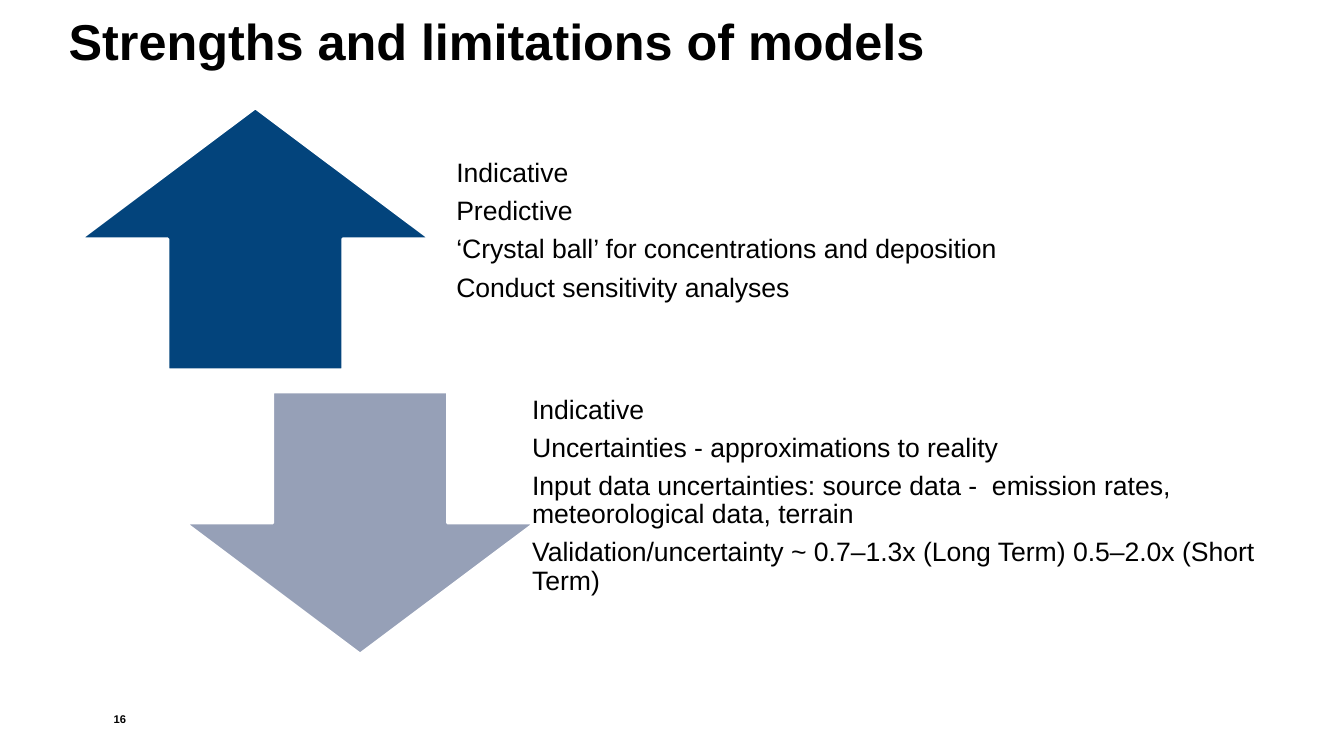
from dataclasses import dataclass

from pptx import Presentation
from pptx.dml.color import RGBColor
from pptx.enum.shapes import MSO_SHAPE
from pptx.enum.text import MSO_ANCHOR, PP_ALIGN
from pptx.util import Cm, Pt

UP_ARROW, DOWN_ARROW = MSO_SHAPE.UP_ARROW, MSO_SHAPE.DOWN_ARROW
TOP, MIDDLE, BOTTOM = MSO_ANCHOR.TOP, MSO_ANCHOR.MIDDLE, MSO_ANCHOR.BOTTOM
LEFT, RIGHT = PP_ALIGN.LEFT, PP_ALIGN.RIGHT


@dataclass(frozen=True)
class Theme:
    font: str = "Arial"
    text: RGBColor = RGBColor(0x00, 0x00, 0x00)
    outline: RGBColor = RGBColor(0xFF, 0xFF, 0xFF)
    strength: RGBColor = RGBColor(0x03, 0x44, 0x7C)
    limitation: RGBColor = RGBColor(0x96, 0xA0, 0xB7)
    title_size: float = 36
    body_size: float = 19
    number_size: float = 8
    body_gap: float = 6.65


THEME = Theme()

# Lengths in centimetres
SLIDE_WIDTH, SLIDE_HEIGHT = 33.87, 19.05
MARGIN_LEFT = 1.73
ARROW_WIDTH, ROW_HEIGHT = 8.81, 6.6
BODY_INSET = 0.38

STRENGTHS = [
    "Indicative",
    "Predictive",
    "‘Crystal ball’ for concentrations and deposition",
    "Conduct sensitivity analyses",
]
LIMITATIONS = [
    "Indicative",
    "Uncertainties - approximations to reality",
    "Input data uncertainties: source data -  emission rates, "
    "meteorological data, terrain",
    "Validation/uncertainty ~ 0.7–1.3x (Long Term) 0.5–2.0x (Short Term)",
]


def add_text(slide, box, lines, size, bold=False, anchor=TOP, align=LEFT,
             insets=(0, 0, 0, 0), spacing=0.9, gap=0):
    """Place lines in box (left, top, width, height)."""
    shape = slide.shapes.add_textbox(*map(Cm, box))
    frame = shape.text_frame
    frame.word_wrap = True
    frame.vertical_anchor = anchor
    (frame.margin_left, frame.margin_top,
     frame.margin_right, frame.margin_bottom) = map(Cm, insets)
    for index, line in enumerate(lines):
        paragraph = frame.paragraphs[0] if index == 0 else frame.add_paragraph()
        paragraph.alignment = align
        paragraph.line_spacing = spacing
        paragraph.space_after = Pt(gap)
        run = paragraph.add_run()
        run.text = line
        run.font.name = THEME.font
        run.font.size = Pt(size)
        run.font.bold = bold
        run.font.color.rgb = THEME.text


def add_title(slide, box):
    add_text(slide, box, ["Strengths and limitations of models"],
             THEME.title_size, bold=True)


def add_arrow_row(slide, box, arrow, color, lines, text_offset, lift=0):
    """Arrow at the left of box, its points to the right; lift raises the text."""
    left, top, width, height = box
    shape = slide.shapes.add_shape(
        arrow, Cm(left), Cm(top), Cm(ARROW_WIDTH), Cm(height))
    shape.shadow.inherit = False
    shape.fill.solid()
    shape.fill.fore_color.rgb = color
    shape.line.color.rgb = THEME.outline
    shape.line.width = Pt(2)
    add_text(slide, (left + text_offset, top, width - text_offset, height),
             lines, THEME.body_size, anchor=MIDDLE,
             insets=(BODY_INSET, 0, BODY_INSET, BODY_INSET + lift),
             gap=THEME.body_gap)


def add_slide_number(slide, box):
    add_text(slide, box, ["16"], THEME.number_size, bold=True,
             anchor=BOTTOM, align=RIGHT, spacing=0.95)


def main():
    presentation = Presentation()
    presentation.slide_width = Cm(SLIDE_WIDTH)
    presentation.slide_height = Cm(SLIDE_HEIGHT)
    slide = presentation.slides.add_slide(presentation.slide_layouts[6])

    add_title(slide, (MARGIN_LEFT, 0.43, 30.4, 1.68))

    # Strengths above, limitations stepped to the right below
    add_arrow_row(slide, (2.03, 2.72, 26.11, ROW_HEIGHT), UP_ARROW,
                  THEME.strength, STRENGTHS, text_offset=9.09)
    add_arrow_row(slide, (4.67, 9.88, 27.46, ROW_HEIGHT), DOWN_ARROW,
                  THEME.limitation, LIMITATIONS, text_offset=8.36, lift=0.97)

    add_slide_number(slide, (MARGIN_LEFT, 17.22, 1.45, 1.07))
    presentation.save("out.pptx")


if __name__ == "__main__":
    main()
